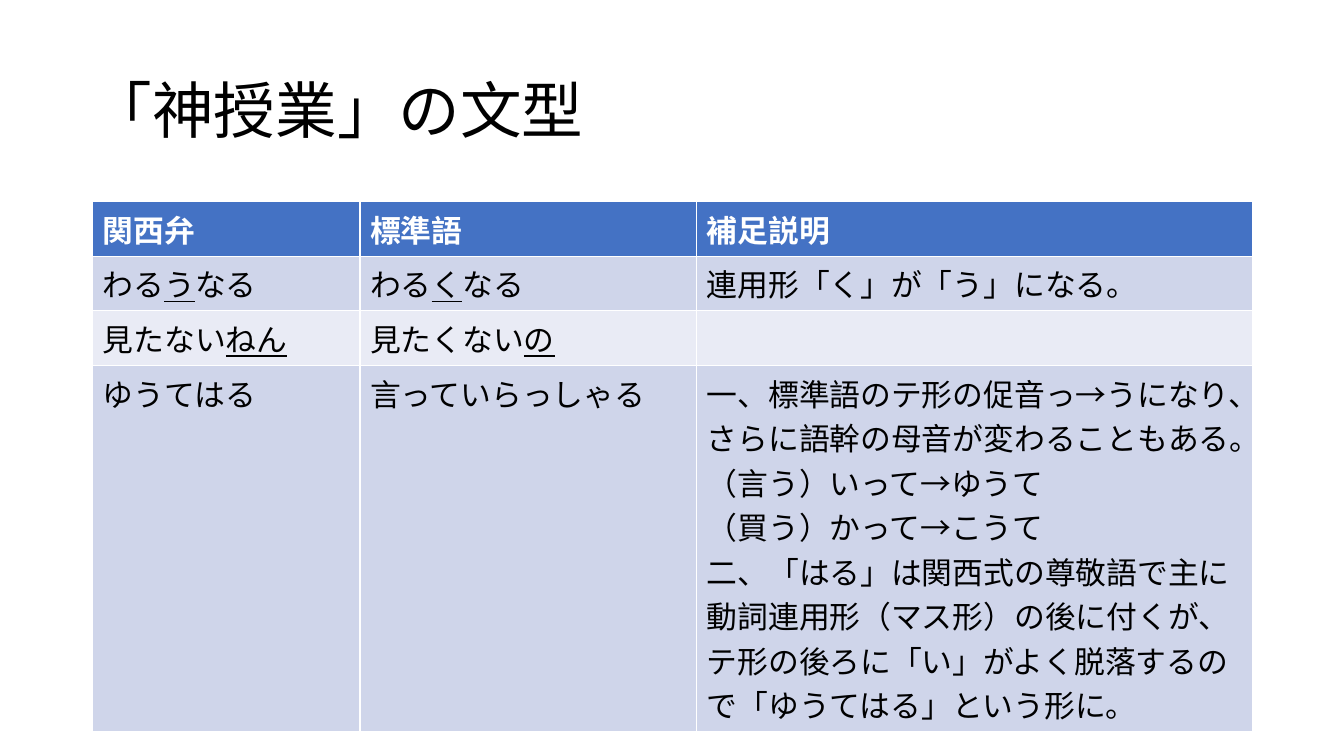
import pptx
import pptx.dml.color
import pptx.enum.text
import pptx.util

TITLE = "「神授業」の文型"
ROWS = [
    ["関西弁", "標準語", "補足説明"],
    ["わる_う_なる", "わる_く_なる", "連用形「く」が「う」になる。"],
    ["見たない_ねん_", "見たくない_の_", ""],
    ["ゆうてはる", "言っていらっしゃる", "\n".join([
        "一、標準語のテ形の促音っ→うになり、さらに語幹の母音が変わることもある。",
        "（言う）いって→ゆうて",
        "（買う）かって→こうて",
        "二、「はる」は関西式の尊敬語で主に動詞連用形（マス形）の後に付くが、"
        "テ形の後ろに「い」がよく脱落するので「ゆうてはる」という形に。",
    ])],
]
COLUMN_WIDTHS = [2.65, 3.34, 5.51]
ROW_HEIGHT = 0.41
HEADER_FILL = "4472C4"
BAND_FILLS = ["E9EBF5", "CFD5EA"]


def color(value):
    return pptx.dml.color.RGBColor.from_string(value)


def format_run(run, font_name, size, font_color, bold=False, underline=False):
    run.font.name = font_name
    run.font.size = pptx.util.Pt(size)
    run.font.color.rgb = color(font_color)
    run.font.bold = bold
    run.font.underline = underline


def add_title(slide):
    title = slide.shapes.title
    title.left, title.top, title.width, title.height = map(
        pptx.util.Inches, (0.8, 0.4, 11.61, 1.45))
    title.text_frame.text = TITLE
    title.text_frame.vertical_anchor = pptx.enum.text.MSO_ANCHOR.MIDDLE
    paragraph = title.text_frame.paragraphs[0]
    paragraph.alignment = pptx.enum.text.PP_ALIGN.LEFT
    paragraph.line_spacing = 0.9
    format_run(paragraph.runs[0], "Lato", 44, "000000")


def fill_cell(cell, text, is_header, fill):
    cell.fill.solid()
    cell.fill.fore_color.rgb = color(fill)
    font_color = "FFFFFF" if is_header else "000000"
    for index, line in enumerate(text.split("\n")):
        frame = cell.text_frame
        paragraph = frame.add_paragraph() if index else frame.paragraphs[0]
        paragraph.font.size = pptx.util.Pt(22)
        for part_index, part in enumerate(line.split("_")):
            if part:
                run = paragraph.add_run()
                run.text = part
                format_run(run, "Arial", 22, font_color, is_header, part_index % 2 == 1)


def add_grammar_table(slide):
    table = slide.shapes.add_table(
        len(ROWS), len(COLUMN_WIDTHS), pptx.util.Inches(0.92), pptx.util.Inches(2),
        pptx.util.Inches(sum(COLUMN_WIDTHS)),
        pptx.util.Inches(ROW_HEIGHT * len(ROWS))).table
    for column, width in zip(table.columns, COLUMN_WIDTHS):
        column.width = pptx.util.Inches(width)
    for row_index, texts in enumerate(ROWS):
        table.rows[row_index].height = pptx.util.Inches(ROW_HEIGHT)
        fill = BAND_FILLS[row_index % 2] if row_index else HEADER_FILL
        for column_index, text in enumerate(texts):
            fill_cell(table.cell(row_index, column_index), text, row_index == 0, fill)


def main():
    presentation = pptx.Presentation()
    presentation.slide_width = pptx.util.Inches(13.33)
    presentation.slide_height = pptx.util.Inches(7.5)
    slide = presentation.slides.add_slide(presentation.slide_layouts[5])
    add_title(slide)
    add_grammar_table(slide)
    presentation.save("out.pptx")


if __name__ == "__main__":
    main()
